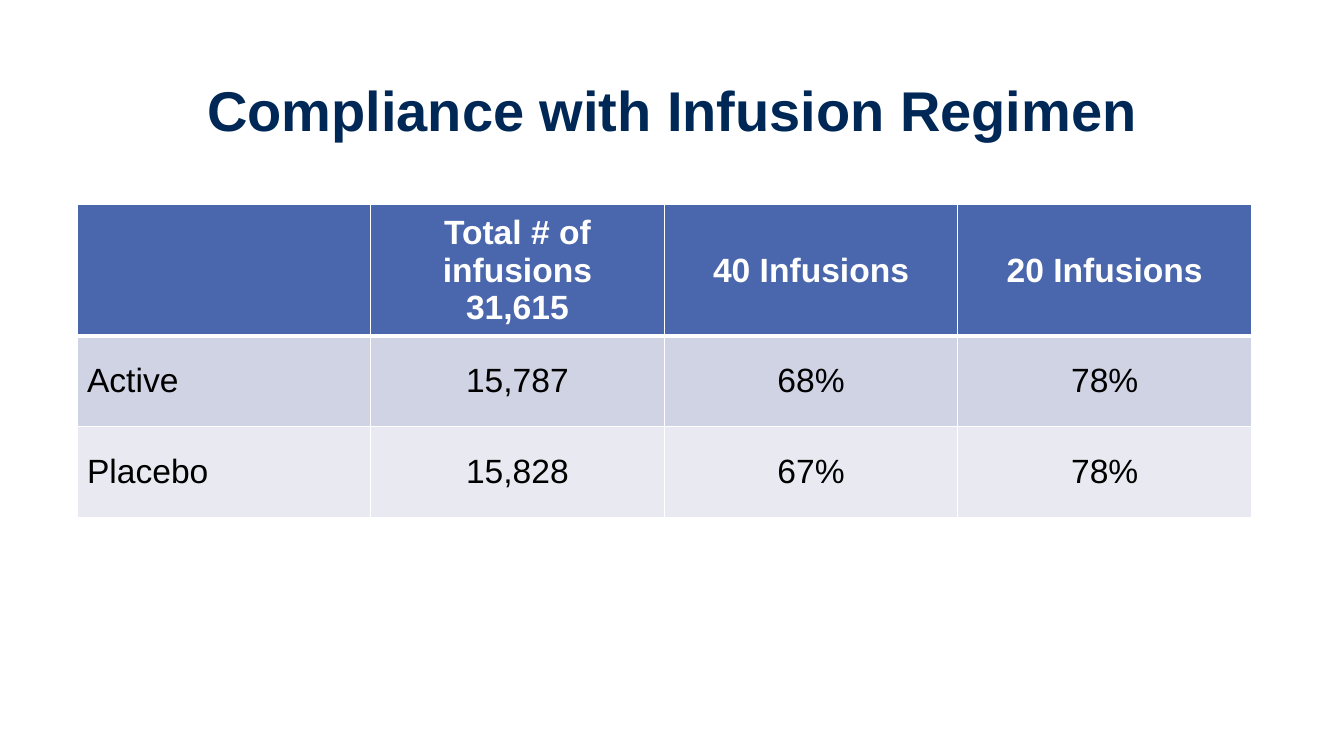
import pptx
import pptx.util
import pptx.dml.color
import pptx.enum.text
from lxml import etree
from pptx.util import Cm, Pt

RGBColor = pptx.dml.color.RGBColor
ALIGN = pptx.enum.text.PP_ALIGN
MIDDLE = pptx.enum.text.MSO_ANCHOR.MIDDLE

# Content
TITLE = "Compliance with Infusion Regimen"
ROWS = [
    ("", "Total # of infusions\n31,615", "40 Infusions", "20 Infusions"),
    ("Active", "15,787", "68%", "78%"),
    ("Placebo", "15,828", "67%", "78%"),
]

# Style
FONT = "Arial"
NAVY = RGBColor(0x00, 0x28, 0x56)
EDGE = RGBColor(0x00, 0x20, 0x60)
WHITE = RGBColor(0xFF, 0xFF, 0xFF)
BLACK = RGBColor(0x00, 0x00, 0x00)
FILLS = [
    RGBColor(0x4A, 0x66, 0xAC),
    RGBColor(0xD0, 0xD3, 0xE3),
    RGBColor(0xE9, 0xEA, 0xF1),
]
COL_W, ROW_H = Cm(7.4), Cm(2.29)
NS = "http://schemas.openxmlformats.org/drawingml/2006/main"


def make_line(tag, width, color):
    line = etree.Element(f"{{{NS}}}{tag}", w=str(Pt(width)))
    fill = etree.SubElement(line, f"{{{NS}}}solidFill")
    etree.SubElement(fill, f"{{{NS}}}srgbClr", val=str(color))
    return line


def style_text(para, size, color, bold, align):
    para.alignment = align
    for run in para.runs:
        font = run.font
        font.name, font.size, font.bold = FONT, Pt(size), bold
        font.color.rgb = color


def add_title(slide):
    box = slide.shapes.add_textbox(Cm(2.33), Cm(1.02), Cm(29.21), Cm(3.68))
    frame = box.text_frame
    frame.word_wrap = True
    frame.vertical_anchor = MIDDLE
    frame.text = TITLE
    para = frame.paragraphs[0]
    para.line_spacing = 0.9
    style_text(para, 40, NAVY, True, ALIGN.CENTER)
    # Thin outline around the letters
    para.runs[0].font._element.insert(0, make_line("ln", 0.75, EDGE))


def style_cell(cell, row, col):
    head = row == 0
    cell.vertical_anchor = MIDDLE
    cell.fill.solid()
    cell.fill.fore_color.rgb = FILLS[row]
    for para in cell.text_frame.paragraphs:
        style_text(para, 24, WHITE if head else BLACK, head,
                   ALIGN.CENTER if col else ALIGN.LEFT)
        if not para.runs:
            para.font.size = Pt(24)
    # White borders, thick below the header
    widths = {"lnL": 1, "lnR": 1, "lnT": 3 if row == 1 else 1,
              "lnB": 3 if head else 1}
    props = cell._tc.get_or_add_tcPr()
    for spot, (tag, width) in enumerate(widths.items()):
        props.insert(spot, make_line(tag, width, WHITE))


def add_grid(slide):
    rows, cols = len(ROWS), len(ROWS[0])
    table = slide.shapes.add_table(rows, cols, Cm(1.94), Cm(5.16),
                                   COL_W * cols, ROW_H * rows).table
    for r, texts in enumerate(ROWS):
        table.rows[r].height = ROW_H
        for c, text in enumerate(texts):
            table.columns[c].width = COL_W
            cell = table.cell(r, c)
            cell.text_frame.text = text
            style_cell(cell, r, c)


def main():
    deck = pptx.Presentation()
    deck.slide_width, deck.slide_height = Cm(33.87), Cm(19.05)
    slide = deck.slides.add_slide(deck.slide_layouts[6])
    add_title(slide)
    add_grid(slide)
    deck.save("out.pptx")


if __name__ == "__main__":
    main()
